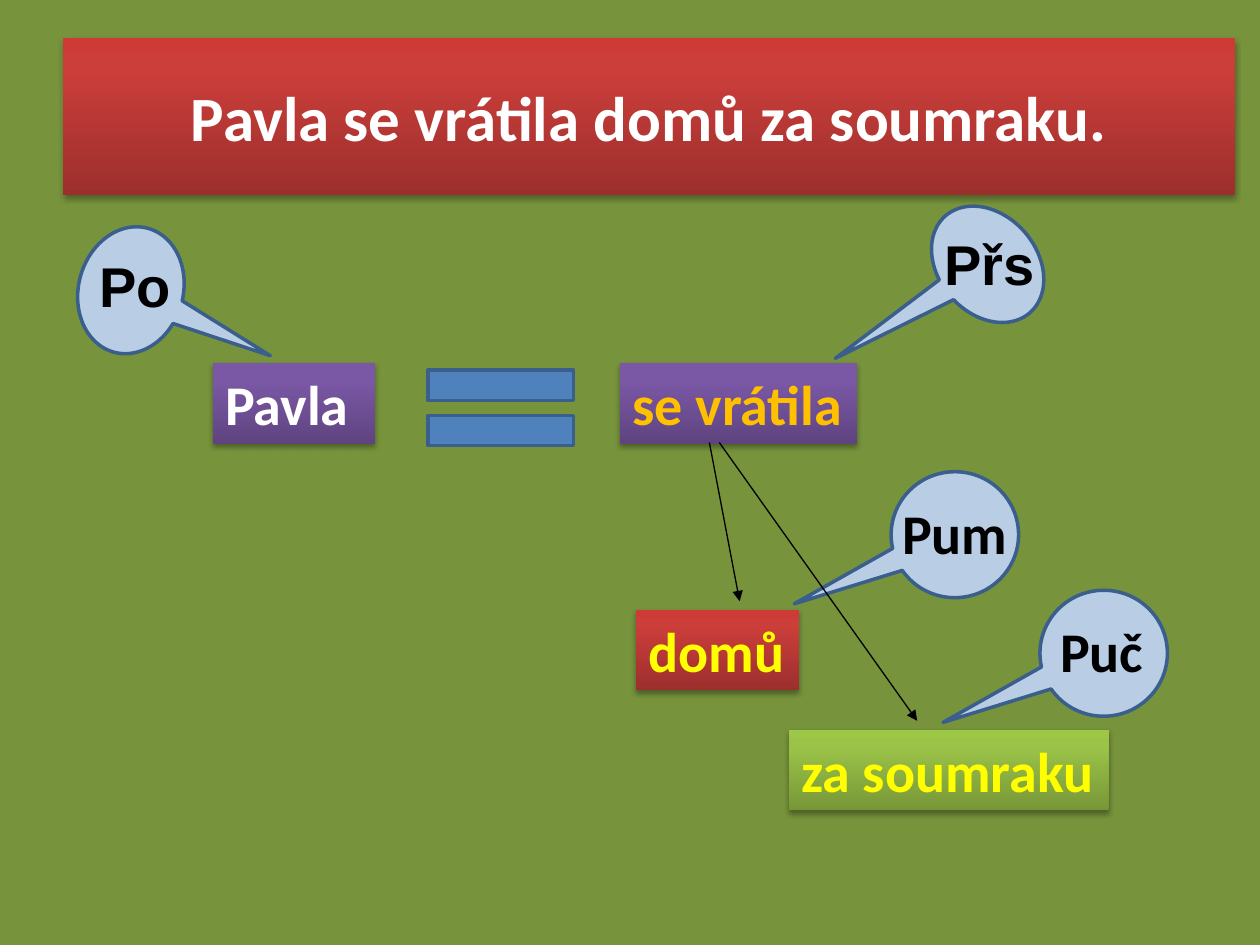
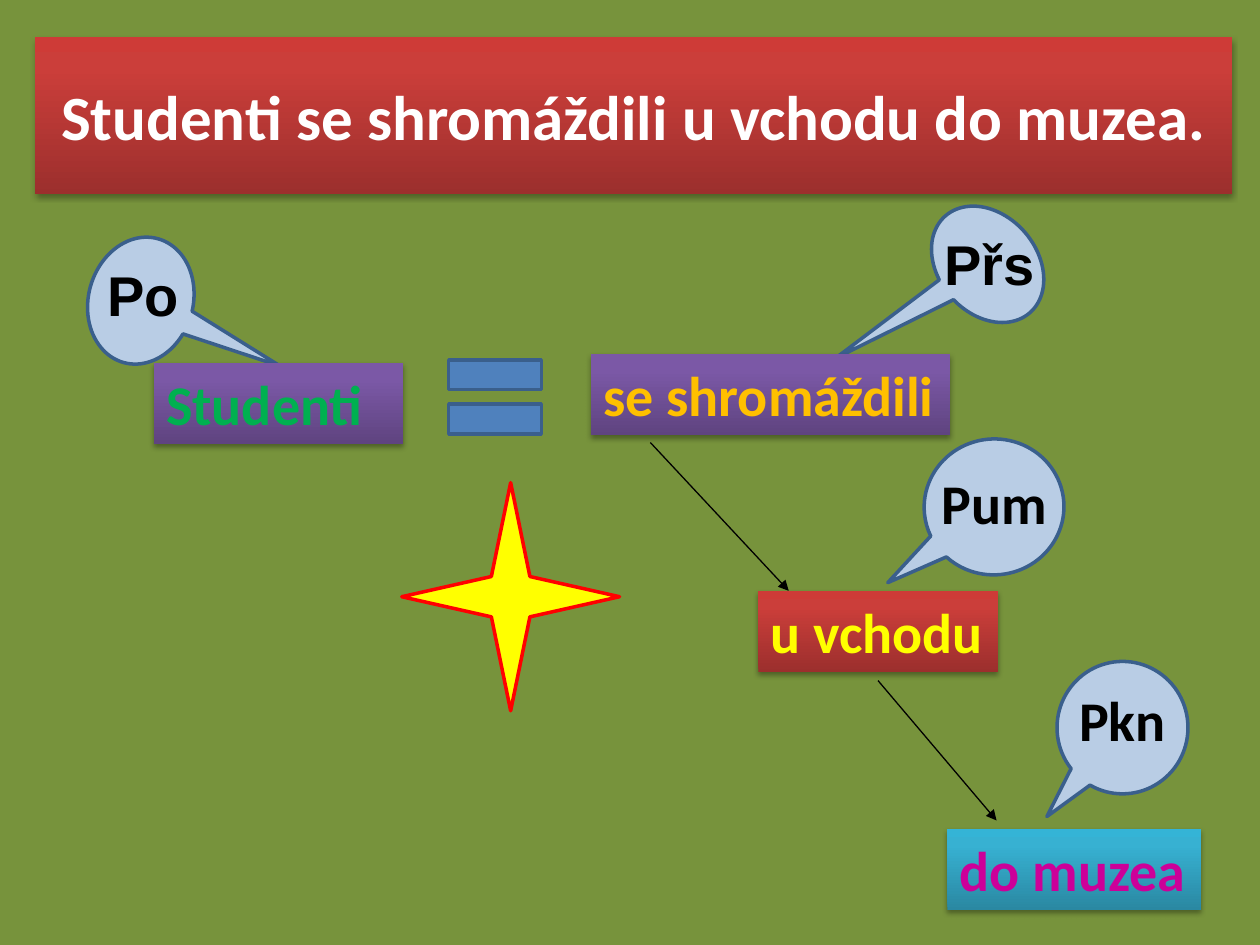
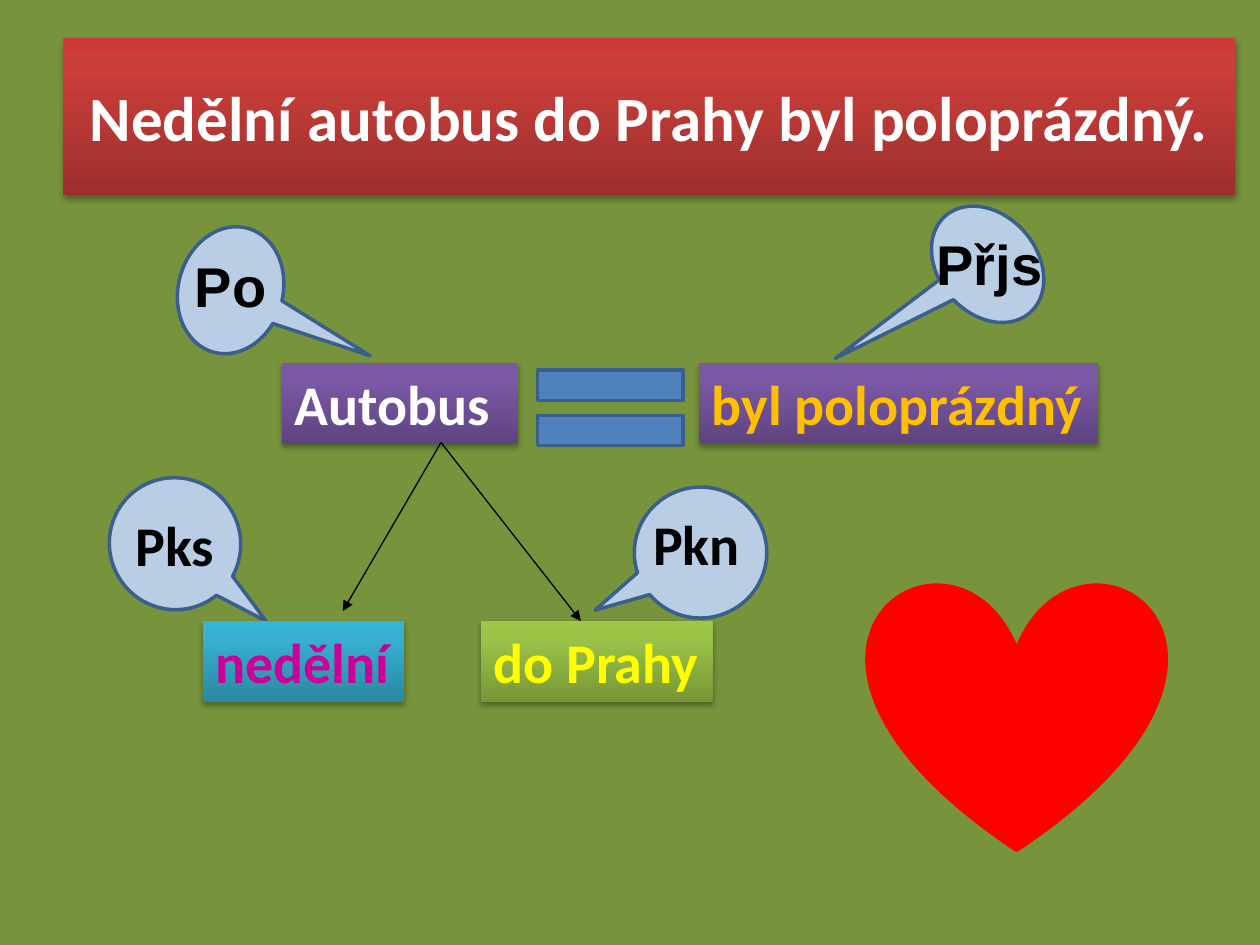
"""Build three slides that diagram the parts of Czech sentences."""
from copy import deepcopy
from dataclasses import dataclass

from lxml.etree import SubElement
from pptx import Presentation
from pptx.dml.color import RGBColor
from pptx.enum.shapes import MSO_CONNECTOR, MSO_SHAPE
from pptx.enum.text import MSO_ANCHOR, PP_ALIGN
from pptx.oxml.ns import qn
from pptx.util import Cm, Pt


@dataclass(frozen=True)
class Theme:
    background: str = "77933C"
    bubble: str = "B9CDE5"
    equals: str = "4F81BD"
    outline: str = "3A5F8C"
    black: str = "000000"
    white: str = "FFFFFF"
    orange: str = "FFC000"
    yellow: str = "FFFF00"
    green: str = "00B050"
    magenta: str = "CC0099"
    red: str = "FF0000"
    font: str = "Calibri"
    label_font: str = "Arial"
    title_size: int = 36
    text_size: int = 32
    outline_width: float = 2
    arrow_width: float = 0.75


THEME = Theme()
GRADIENTS = {
    "red": ("9C2F2D", "CB3E3A", "CE3B37"),
    "purple": ("5F4480", "7B58A6", "7C57A8"),
    "lime": ("779737", "9BC348", "9DC746"),
    "aqua": ("2A88A2", "37B1D2", "34B4D6"),
}
STOPS = (0, 0.8, 1)
WORD_HEIGHT = 1.63
TITLE_HEIGHT = 3.18
LABEL_WIDTH = 3

# width, height, rotation, mirrored, pointer adjustments, label font
BUBBLES = {
    "subject": (2.59, 2.11, 285.5, False, (-0.201, 1.451), THEME.label_font),
    "predicate": (2.59, 1.98, 48.9, False, (-0.228, 1.798), THEME.label_font),
    "adverbial": (2.54, 2.57, 266.5, True, (0.47, -1.291), THEME.font),
    "place": (2.74, 2.82, 264.4, True, (0.478, -0.809), THEME.font),
    "attribute below": (2.64, 2.67, 0, False, (-0.578, 0.671), THEME.font),
    "attribute right": (2.64, 2.67, 326.4, False, (0.252, 0.867), THEME.font),
    "attribute left": (2.64, 2.67, 86, False, (0.383, 0.825), THEME.font),
}

# bubbles: label, kind, centre, label offset; words: text, gradient, colour, left, top, width
SENTENCES = [
    {
        "title": ("Pavla se vrátila domů za soumraku.", 1.27, 0.76, 23.62),
        "bubbles": [
            ("Po", "subject", (2.64, 5.85), (0.08, -0.11)),
            ("Přs", "predicate", (19.91, 5.33), (0.04, -0.03)),
            ("Pum", "adverbial", (19.25, 10.78), (0, -0.06)),
            ("Puč", "adverbial", (22.25, 13.17), (-0.04, -0.06)),
        ],
        "words": [
            ("Pavla", "purple", THEME.white, 4.29, 7.32, 3.28),
            ("se vrátila", "purple", THEME.orange, 12.5, 7.32, 4.78),
            ("domů", "red", THEME.yellow, 12.83, 12.29, 3.28),
            ("za soumraku", "lime", THEME.yellow, 15.9, 14.71, 6.45),
        ],
        "equals": (8.1, 6.93, 3.99, 2.59),
        "arrows": [(14.3, 8.92, 14.91, 12.12), (14.5, 8.92, 18.49, 14.53)],
    },
    {
        "title": ("Studenti se shromáždili u vchodu do muzea.", 0.71, 0.74, 24.13),
        "bubbles": [
            ("Po", "subject", (2.84, 6.06), (0.05, -0.14)),
            ("Přs", "predicate", (19.91, 5.33), (0.04, -0.03)),
            ("Pum", "place", (20.04, 10.22), (0, -0.09)),
            ("Pkn", "attribute below", (22.63, 14.67), (0, -0.17)),
        ],
        "words": [
            ("Studenti", "purple", THEME.green, 3.1, 7.32, 5.03),
            ("se shromáždili", "purple", THEME.orange, 11.91, 7.14, 7.24),
            ("u vchodu", "red", THEME.yellow, 15.29, 11.91, 4.83),
            ("do muzea", "aqua", THEME.magenta, 19.1, 16.71, 5.11),
        ],
        "equals": (8.71, 6.73, 2.54, 2.54),
        "arrows": [(17.7, 13.72, 20.09, 16.54), (13.11, 8.92, 15.9, 11.91)],
        "ornament": (MSO_SHAPE.STAR_4_POINT, (8.1, 9.73, 4.39, 4.6), THEME.yellow),
    },
    {
        "title": ("Nedělní autobus do Prahy byl poloprázdný.", 1.27, 0.76, 23.62),
        "bubbles": [
            ("Po", "subject", (4.65, 5.85), (0, -0.11)),
            ("Přjs", "predicate", (19.91, 5.33), (0.04, -0.03)),
            ("Pks", "attribute right", (3.53, 10.96), (0, 0)),
            ("Pkn", "attribute left", (14.12, 11.14), (-0.08, -0.19)),
        ],
        "words": [
            ("Autobus", "purple", THEME.white, 5.69, 7.32, 4.75),
            ("byl poloprázdný", "purple", THEME.orange, 14.1, 7.32, 8.03),
            ("nedělní", "aqua", THEME.magenta, 4.09, 12.52, 4.06),
            ("do Prahy", "lime", THEME.yellow, 9.7, 12.52, 4.67),
        ],
        "equals": (10.31, 6.93, 3.99, 2.59),
        "arrows": [(8.89, 8.92, 6.91, 12.32), (8.89, 8.92, 11.71, 12.52)],
        "ornament": (MSO_SHAPE.HEART, (17.5, 11.73, 5.99, 5.41), THEME.red),
    },
]


def color(value):
    return RGBColor.from_string(value)


def lengths(values):
    return [Cm(value) for value in values]


def add_solid(page, kind, place, fill, outline):
    shape = page.shapes.add_shape(kind, *lengths(place))
    shape.shadow.inherit = False
    shape.fill.solid()
    shape.fill.fore_color.rgb = color(fill)
    shape.line.color.rgb = color(outline)
    shape.line.width = Pt(THEME.outline_width)
    return shape


def write(box, text, font, size, text_color, align, left_inset=0):
    frame = box.text_frame
    frame.text = text
    frame.word_wrap = True
    frame.vertical_anchor = MSO_ANCHOR.MIDDLE
    frame.margin_left, frame.margin_right = Cm(left_inset), 0
    para = frame.paragraphs[0]
    para.alignment = align
    for span in para.runs:
        span.font.name = font
        span.font.size = Pt(size)
        span.font.bold = True
        span.font.color.rgb = color(text_color)


def add_glossy_box(page, place, gradient):
    box = page.shapes.add_shape(MSO_SHAPE.RECTANGLE, *lengths(place))
    box.line.fill.background()
    box.fill.gradient()
    box.fill.gradient_angle = 90
    stop_list = box._element.spPr.find(f".//{qn('a:gsLst')}")
    stop_list.append(deepcopy(stop_list[-1]))
    for stop, position, value in zip(box.fill.gradient_stops, STOPS, GRADIENTS[gradient]):
        stop.position = position
        stop.color.rgb = color(value)
    box.shadow.inherit = False
    effects = box._element.spPr.find(qn("a:effectLst"))
    shadow = SubElement(effects, qn("a:outerShdw"), blurRad="40000", dist="23000",
                        dir="5400000", rotWithShape="0")
    shade = SubElement(shadow, qn("a:srgbClr"), val=THEME.black)
    SubElement(shade, qn("a:alpha"), val="35000")
    return box


def add_bubble(page, label, kind, center, offset):
    width, height, rotation, mirrored, adjustments, font = BUBBLES[kind]
    x, y = center
    bubble = add_solid(page, MSO_SHAPE.OVAL_CALLOUT,
                       (x - width / 2, y - height / 2, width, height),
                       THEME.bubble, THEME.outline)
    bubble.rotation = rotation
    for index, value in enumerate(adjustments):
        bubble.adjustments[index] = value
    if mirrored:
        bubble._element.spPr.find(qn("a:xfrm")).set("flipH", "1")
    left = x + offset[0] - LABEL_WIDTH / 2
    top = y + offset[1] - WORD_HEIGHT / 2
    box = page.shapes.add_textbox(*lengths((left, top, LABEL_WIDTH, WORD_HEIGHT)))
    write(box, label, font, THEME.text_size, THEME.black, PP_ALIGN.CENTER)


def add_word(page, text, gradient, text_color, left, top, width):
    box = add_glossy_box(page, (left, top, width, WORD_HEIGHT), gradient)
    write(box, text, THEME.font, THEME.text_size, text_color, PP_ALIGN.LEFT, 0.25)


def add_arrow(page, ends):
    arrow = page.shapes.add_connector(MSO_CONNECTOR.STRAIGHT, *lengths(ends))
    arrow.line.color.rgb = color(THEME.black)
    arrow.line.width = Pt(THEME.arrow_width)
    properties = arrow._element.spPr
    SubElement(properties.find(qn("a:ln")), qn("a:tailEnd"), type="triangle")
    SubElement(properties, qn("a:effectLst"))


def add_sentence(deck, sentence):
    page = deck.slides.add_slide(deck.slide_layouts[6])
    page.background.fill.solid()
    page.background.fill.fore_color.rgb = color(THEME.background)
    text, *place = sentence["title"]
    title = add_glossy_box(page, (*place, TITLE_HEIGHT), "red")
    write(title, text, THEME.font, THEME.title_size, THEME.white, PP_ALIGN.CENTER)
    for bubble in sentence["bubbles"]:
        add_bubble(page, *bubble)
    for word in sentence["words"]:
        add_word(page, *word)
    add_solid(page, MSO_SHAPE.MATH_EQUAL, sentence["equals"], THEME.equals, THEME.outline)
    for ends in sentence["arrows"]:
        add_arrow(page, ends)
    if "ornament" in sentence:
        add_solid(page, *sentence["ornament"], THEME.red)


def main():
    deck = Presentation()
    deck.slide_width, deck.slide_height = Cm(25.4), Cm(19.05)
    for sentence in SENTENCES:
        add_sentence(deck, sentence)
    deck.save("out.pptx")


if __name__ == "__main__":
    main()
